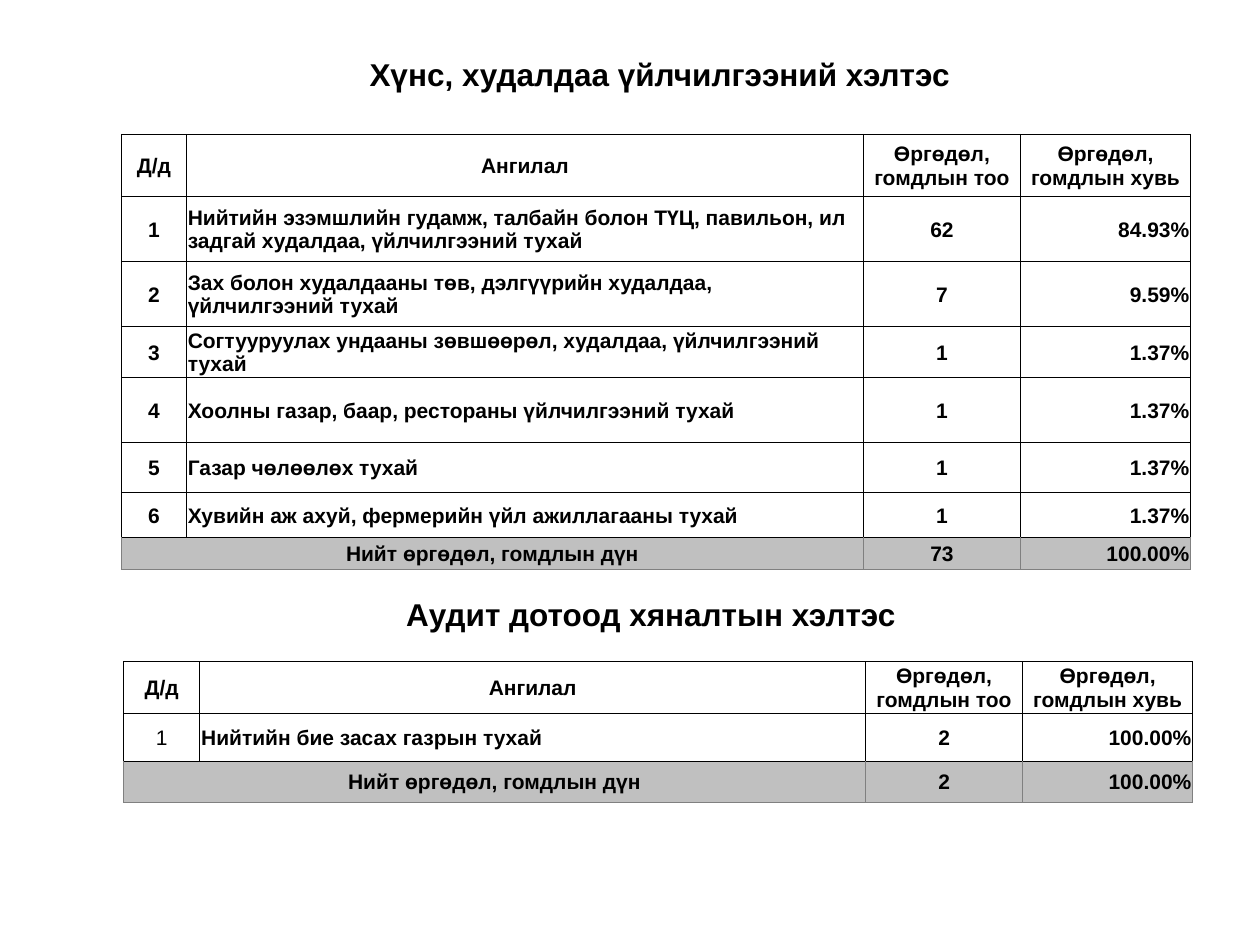
from pptx import Presentation
from pptx.dml.color import RGBColor
from pptx.enum.text import MSO_ANCHOR, PP_ALIGN
from pptx.oxml.ns import qn
from pptx.util import Pt
from lxml.etree import SubElement

BLACK, WHITE, GRAY, SILVER = "000000", "FFFFFF", "808080", "C0C0C0"
LEFT, MID, RIGHT = PP_ALIGN.LEFT, PP_ALIGN.CENTER, PP_ALIGN.RIGHT
HEAD = ("Д/д", "Ангилал", "Өргөдөл, гомдлын тоо", "Өргөдөл, гомдлын хувь")
TOTAL = "Нийт өргөдөл, гомдлын дүн"
FOOD = [
    ("Нийтийн эзэмшлийн гудамж, талбайн болон ТҮЦ, павильон, ил задгай худалдаа, үйлчилгээний тухай", "62", "84.93%"),
    ("Зах болон худалдааны төв, дэлгүүрийн худалдаа, үйлчилгээний тухай", "7", "9.59%"),
    ("Согтууруулах ундааны зөвшөөрөл, худалдаа, үйлчилгээний тухай", "1", "1.37%"),
    ("Хоолны газар, баар, рестораны үйлчилгээний тухай", "1", "1.37%"),
    ("Газар чөлөөлөх тухай", "1", "1.37%"),
    ("Хувийн аж ахуй, фермерийн үйл ажиллагааны тухай", "1", "1.37%"),
]
AUDIT = [("Нийтийн бие засах газрын тухай", "2", "100.00%")]


def paint(color):
    return RGBColor.from_string(color)


def write(frame, text, size=12, bold=True, color=BLACK, align=MID, space=None):
    par = frame.paragraphs[0]
    par.alignment = align
    par.line_spacing = space
    run = par.add_run()
    run.text = text
    font = run.font
    font.name, font.size, font.bold = "Arial", Pt(size), bold
    font.color.rgb = paint(color)


def place(shape, left, top, width, height):
    shape.left, shape.top = Pt(left), Pt(top)
    shape.width, shape.height = Pt(width), Pt(height)


def head(shape, text, *box):
    place(shape, *box)
    frame = shape.text_frame
    frame.word_wrap = True
    frame.vertical_anchor = MSO_ANCHOR.MIDDLE
    write(frame, text, size=18, space=0.9)


def edge(cell, side, color):
    props = cell._tc.get_or_add_tcPr()
    line = SubElement(props, qn("a:ln" + side), w=str(Pt(0.5)))
    fill = SubElement(line, qn("a:solidFill"))
    SubElement(fill, qn("a:srgbClr"), val=color)


def style(cell, total):
    for side in "LRTB":
        edge(cell, side, GRAY if total and side != "T" else BLACK)
    cell.fill.solid()
    cell.fill.fore_color.rgb = paint(SILVER if total else WHITE)
    cell.vertical_anchor = MSO_ANCHOR.MIDDLE
    cell.margin_left = cell.margin_right = cell.margin_top = Pt(0.75)
    cell.margin_bottom = 0


def grid(slide, left, top, cols, rows, items, sums, bold):
    body = [(str(num), *item) for num, item in enumerate(items, 1)]
    data = [HEAD, *body, (TOTAL, "", *sums)]
    last = len(data) - 1
    frame = slide.shapes.add_table(len(data), len(cols), Pt(left), Pt(top),
                                   Pt(sum(cols)), Pt(sum(rows)))
    table = frame.table
    table.first_row = table.horz_banding = False
    for col, width in zip(table.columns, cols):
        col.width = Pt(width)
    for row, height in zip(table.rows, rows):
        row.height = Pt(height)
    for y, texts in enumerate(data):
        aligns = (MID,) * 4 if y == 0 else (MID, LEFT, MID, RIGHT)
        for x, text in enumerate(texts):
            cell = table.cell(y, x)
            style(cell, y == last)
            if text:
                heavy = bold or x > 0 or y in (0, last)
                write(cell.text_frame, text, bold=heavy, align=aligns[x])
    table.cell(last, 0).merge(table.cell(last, 1))


def main():
    deck = Presentation()
    deck.slide_width, deck.slide_height = Pt(720), Pt(540)
    slide = deck.slides.add_slide(deck.slide_layouts[5])
    head(slide.shapes.title, "Аудит дотоод хяналтын хэлтэс ", 69, 337, 611, 30)
    grid(slide, 69.4, 76.8, (37.2, 386.8, 89.8, 97.2),
         (35.5, 37.2, 37.2, 29.2, 37.2, 28.5, 25.8, 18.2),
         FOOD, ("73", "100.00%"), True)
    box = slide.shapes.add_textbox(0, 0, 0, 0)
    head(box, "Хүнс, худалдаа үйлчилгээний хэлтэс ", 69, 21, 621, 45)
    grid(slide, 70.6, 378, (43.6, 380.4, 89.8, 97.2), (29.6, 27.4, 23.6),
         AUDIT, ("2", "100.00%"), False)
    deck.save("out.pptx")


if __name__ == "__main__":
    main()
